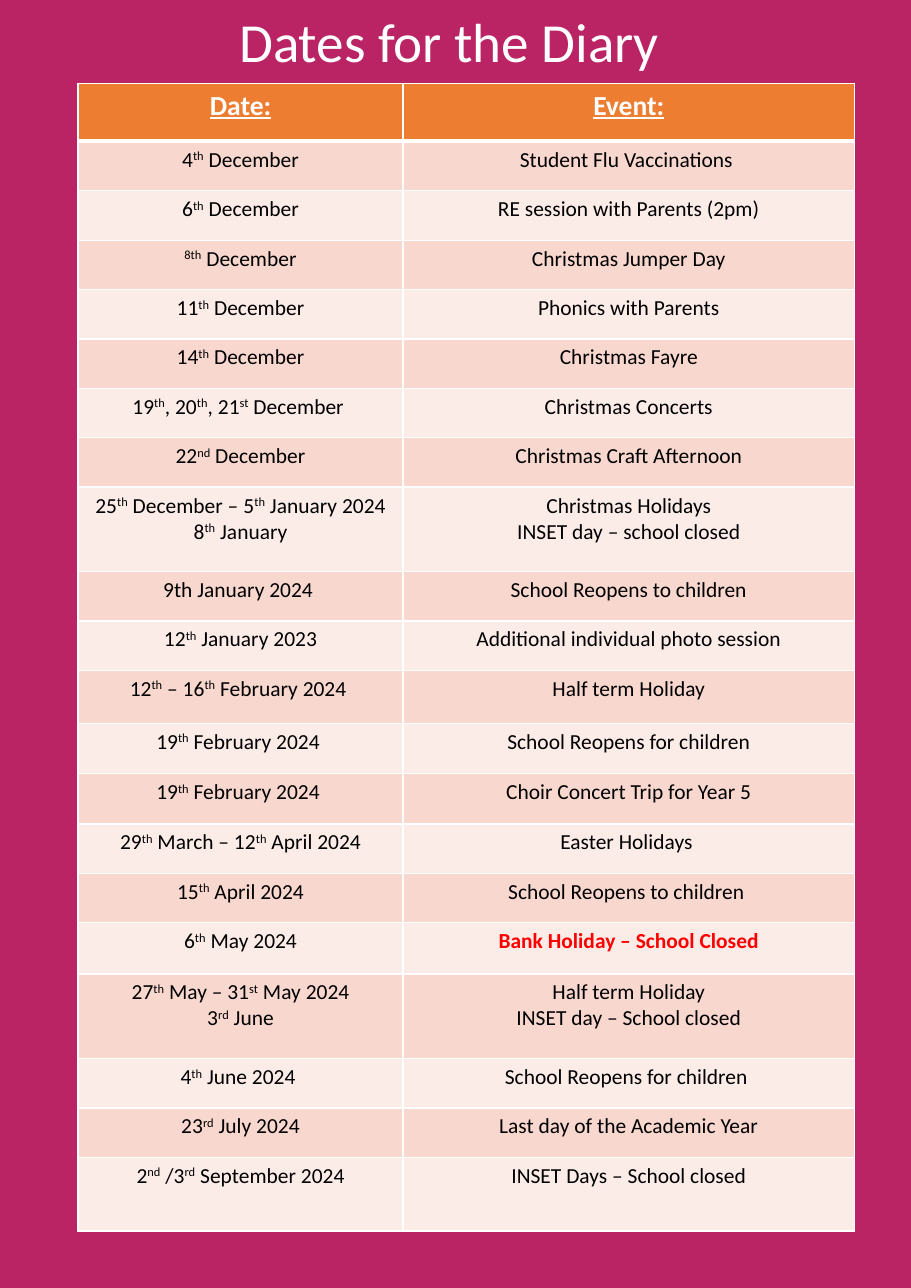
import pptx
import pptx.dml.color
import pptx.enum.shapes
import pptx.enum.text
import pptx.oxml
import pptx.oxml.ns
import pptx.util

Cm, Pt = pptx.util.Cm, pptx.util.Pt
Colour = pptx.dml.color.RGBColor.from_string
CENTRE = pptx.enum.text.PP_ALIGN.CENTER

theme = {
    "font": "Calibri",
    "backdrop": "BA2464",
    "header": "ED7D31",
    "bands": ["F8D7CE", "FCECE8"],
    "light": "FFFFFF",
    "text": "000000",
    "alert": "FF0000",
    "title_size": 36,
    "header_size": 18,
    "body_size": 14,
    "rule": 1,
    "header_rule": 3,
}

ROW = 1.14
diary = [
    ("4^th^ December", "Student Flu Vaccinations ", ROW),
    ("6^th^ December", "RE session with Parents (2pm)", ROW),
    ("^8th^ December", "Christmas Jumper Day", ROW),
    ("11^th^ December", "Phonics with Parents", ROW),
    ("14^th^ December", "Christmas Fayre", ROW),
    ("19^th^, 20^th^, 21^st^ December ", "Christmas Concerts", ROW),
    ("22^nd^ December", "Christmas Craft Afternoon", ROW),
    ("25^th^ December – 5^th^ January 2024\n8^th^ January",
     "Christmas Holidays\nINSET day – school closed", 1.95),
    ("9th January 2024 ", "School Reopens to children", ROW),
    ("12^th^ January 2023", "Additional individual photo session", ROW),
    ("12^th^ – 16^th^ February 2024 ", "Half term Holiday", 1.22),
    ("19^th^ February 2024 ", "School Reopens for children", 1.16),
    ("19^th^ February 2024 ", "Choir Concert Trip for Year 5", 1.16),
    ("29^th^ March – 12^th^ April 2024", "Easter Holidays ", ROW),
    ("15^th^ April 2024", "School Reopens to children ", ROW),
    ("6^th^ May 2024", "Bank Holiday – School Closed", 1.18),
    ("27^th^ May – 31^st^ May 2024\n3^rd^ June",
     "Half term Holiday\nINSET day – School closed", 1.95),
    ("4^th^ June 2024 ", "School Reopens for children ", ROW),
    ("23^rd^ July 2024", "Last day of the Academic Year", ROW),
    ("2^nd^ /3^rd^ September 2024", "INSET Days – School closed", 1.7),
]


def write(frame, text, size, colour, bold=False, underline=False):
    for index, line in enumerate(text.split("\n")):
        paragraph = frame.add_paragraph() if index else frame.paragraphs[0]
        paragraph.alignment = CENTRE
        paragraph.font.name = theme["font"]
        paragraph.font.size = Pt(size)
        paragraph.font.color.rgb = Colour(colour)
        paragraph.font.bold = bold
        paragraph.font.underline = underline
        for part, words in enumerate(line.split("^")):
            if words:
                run = paragraph.add_run()
                run.text = words
                if part % 2:
                    run._r.get_or_add_rPr().set("baseline", "30000")


def paint(cell, fill, top, bottom):
    widths = {"lnL": theme["rule"], "lnR": theme["rule"], "lnT": top, "lnB": bottom}
    properties = cell._tc.get_or_add_tcPr()
    for edge, width in widths.items():
        properties.append(pptx.oxml.parse_xml(
            f'<a:{edge} {pptx.oxml.ns.nsdecls("a")} w="{Pt(width)}"><a:solidFill>'
            f'<a:srgbClr val="{theme["light"]}"/></a:solidFill></a:{edge}>'))
    cell.fill.solid()
    cell.fill.fore_color.rgb = Colour(fill)


deck = pptx.Presentation()
deck.slide_width, deck.slide_height = Cm(21), Cm(29.7)
slide = deck.slides.add_slide(deck.slide_layouts[6])
slide.background.fill.solid()
slide.background.fill.fore_color.rgb = Colour(theme["backdrop"])

title = slide.shapes.add_shape(
    pptx.enum.shapes.MSO_SHAPE.RECTANGLE, 0, 0, deck.slide_width, Cm(1.88))
title.shadow.inherit = False
title.fill.solid()
title.fill.fore_color.rgb = Colour(theme["backdrop"])
title.line.fill.background()
title.text_frame.word_wrap = True
title.text_frame.vertical_anchor = pptx.enum.text.MSO_ANCHOR.MIDDLE
write(title.text_frame, "Dates for the Diary ", theme["title_size"], theme["light"])

heights = [1.34] + [height for _, _, height in diary]
dates = slide.shapes.add_table(
    len(heights), 2, Cm(1.8), Cm(1.92), Cm(17.9), Cm(sum(heights))).table
for column, width in zip(dates.columns, (7.49, 10.41)):
    column.width = Cm(width)
for row, height in zip(dates.rows, heights):
    row.height = Cm(height)

for column, heading in enumerate(("Date:", "Event:")):
    cell = dates.cell(0, column)
    paint(cell, theme["header"], theme["rule"], theme["header_rule"])
    write(cell.text_frame, heading, theme["header_size"], theme["light"], True, True)

for number, (date, event, _) in enumerate(diary, 1):
    top = theme["header_rule"] if number == 1 else theme["rule"]
    for column, text in enumerate((date, event)):
        cell = dates.cell(number, column)
        paint(cell, theme["bands"][(number - 1) % 2], top, theme["rule"])
        alert = text.startswith("Bank Holiday")
        colour = theme["alert"] if alert else theme["text"]
        write(cell.text_frame, text, theme["body_size"], colour, alert)

deck.save("out.pptx")
